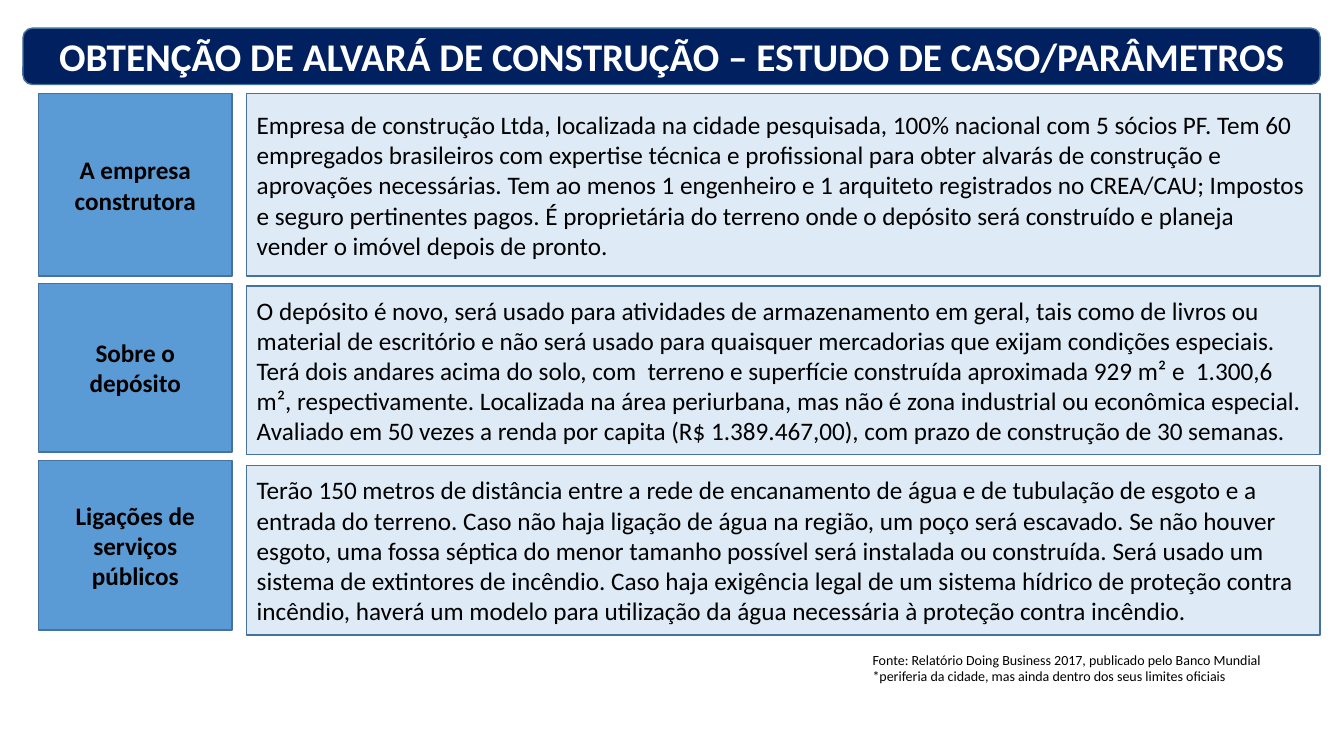
"""Build the slide on the case study for obtaining a building permit."""
from dataclasses import dataclass

from pptx import Presentation
from pptx.dml.color import RGBColor
from pptx.enum.shapes import MSO_SHAPE
from pptx.enum.text import MSO_ANCHOR, MSO_AUTO_SIZE, PP_ALIGN
from pptx.shapes.autoshape import Shape
from pptx.slide import Slide
from pptx.util import Cm, Pt

NAVY = RGBColor(0x00, 0x20, 0x60)
BLUE = RGBColor(0x5B, 0x9B, 0xD5)
PALE_BLUE = RGBColor(0xDE, 0xEB, 0xF7)
OUTLINE = RGBColor(0x43, 0x73, 0x9E)
BLACK = RGBColor(0x00, 0x00, 0x00)
WHITE = RGBColor(0xFF, 0xFF, 0xFF)
FONT = "Calibri"

LABEL_LEFT, LABEL_WIDTH = 0.97, 4.88
DETAIL_LEFT, DETAIL_WIDTH = 6.22, 27.05


@dataclass(frozen=True)
class Area:
    """Place and size of a box in centimetres."""
    left: float
    top: float
    width: float
    height: float

    def lengths(self) -> tuple[Cm, Cm, Cm, Cm]:
        """Return the four measures as lengths."""
        return Cm(self.left), Cm(self.top), Cm(self.width), Cm(self.height)


@dataclass(frozen=True)
class Topic:
    """A labelled row of the case study."""
    label: str
    detail: str
    label_top: float
    detail_top: float
    height: float


TOPICS = (
    Topic(
        "A empresa construtora",
        "Empresa de construção Ltda, localizada na cidade pesquisada, 100% nacional com "
        "5 sócios PF. Tem 60 empregados brasileiros com expertise técnica e profissional "
        "para obter alvarás de construção e aprovações necessárias. Tem ao menos 1 "
        "engenheiro e 1 arquiteto registrados no CREA/CAU; Impostos e seguro pertinentes "
        "pagos. É proprietária do terreno onde o depósito será construído e planeja "
        "vender o imóvel depois de pronto.",
        2.36, 2.36, 4.6,
    ),
    Topic(
        "Sobre o depósito",
        "O depósito é novo, será usado para atividades de armazenamento em geral, tais "
        "como de livros ou material de escritório e não será usado para quaisquer "
        "mercadorias que exijam condições especiais. Terá dois andares acima do solo, "
        "com  terreno e superfície construída aproximada 929 m² e  1.300,6 m², "
        "respectivamente. Localizada na área periurbana, mas não é zona industrial ou "
        "econômica especial. Avaliado em 50 vezes a renda por capita (R$ 1.389.467,00), "
        "com prazo de construção de 30 semanas.",
        7.14, 7.21, 4.25,
    ),
    Topic(
        "Ligações de serviços públicos",
        "Terão 150 metros de distância entre a rede de encanamento de água e de "
        "tubulação de esgoto e a entrada do terreno. Caso não haja ligação de água na "
        "região, um poço será escavado. Se não houver esgoto, uma fossa séptica do menor "
        "tamanho possível será instalada ou construída. Será usado um sistema de "
        "extintores de incêndio. Caso haja exigência legal de um sistema hídrico de "
        "proteção contra incêndio, haverá um modelo para utilização da água necessária à "
        "proteção contra incêndio.",
        11.61, 11.73, 4.27,
    ),
)
SOURCE_NOTES = (
    "Fonte: Relatório Doing Business 2017, publicado pelo Banco Mundial",
    "*periferia da cidade, mas ainda dentro dos seus limites oficiais",
)


def write_text(box: Shape, *lines: str, size: float = 18, color: RGBColor = BLACK,
               bold: bool = False, align: PP_ALIGN = PP_ALIGN.LEFT,
               anchor: MSO_ANCHOR = MSO_ANCHOR.MIDDLE) -> None:
    """Write one paragraph per line into a box."""
    frame = box.text_frame
    frame.word_wrap = True
    frame.vertical_anchor = anchor
    for index, line in enumerate(lines):
        para = frame.add_paragraph() if index else frame.paragraphs[0]
        para.alignment = align
        span = para.add_run()
        span.text = line
        span.font.name = FONT
        span.font.size = Pt(size)
        span.font.bold = bold
        span.font.color.rgb = color


def add_panel(page: Slide, area: Area, fill: RGBColor,
              kind: MSO_SHAPE = MSO_SHAPE.RECTANGLE) -> Shape:
    """Add a filled panel with a thin outline."""
    panel = page.shapes.add_shape(kind, *area.lengths())
    panel.shadow.inherit = False
    panel.fill.solid()
    panel.fill.fore_color.rgb = fill
    panel.line.color.rgb = OUTLINE
    panel.line.width = Pt(1)
    return panel


def add_topic(page: Slide, topic: Topic) -> None:
    """Add the label and the detail panel of a topic."""
    label_area = Area(LABEL_LEFT, topic.label_top, LABEL_WIDTH, topic.height)
    write_text(add_panel(page, label_area, BLUE), topic.label,
               bold=True, align=PP_ALIGN.CENTER)
    detail_area = Area(DETAIL_LEFT, topic.detail_top, DETAIL_WIDTH, topic.height)
    write_text(add_panel(page, detail_area, PALE_BLUE), topic.detail)


def main() -> None:
    """Build and save the deck."""
    deck = Presentation()
    deck.slide_width, deck.slide_height = Cm(33.87), Cm(19.05)
    page = deck.slides.add_slide(deck.slide_layouts[6])

    title = add_panel(page, Area(0.58, 0.71, 32.69, 1.42), NAVY,
                      MSO_SHAPE.ROUNDED_RECTANGLE)
    write_text(title, "OBTENÇÃO DE ALVARÁ DE CONSTRUÇÃO – ESTUDO DE CASO/PARÂMETROS",
               size=28, color=WHITE, bold=True, align=PP_ALIGN.CENTER)

    for topic in TOPICS:
        add_topic(page, topic)

    notes_box = page.shapes.add_textbox(*Area(21.74, 16.28, 11.53, 1.12).lengths())
    write_text(notes_box, *SOURCE_NOTES, size=10, anchor=MSO_ANCHOR.TOP)
    notes_box.text_frame.auto_size = MSO_AUTO_SIZE.SHAPE_TO_FIT_TEXT

    deck.save("out.pptx")


if __name__ == "__main__":
    main()
